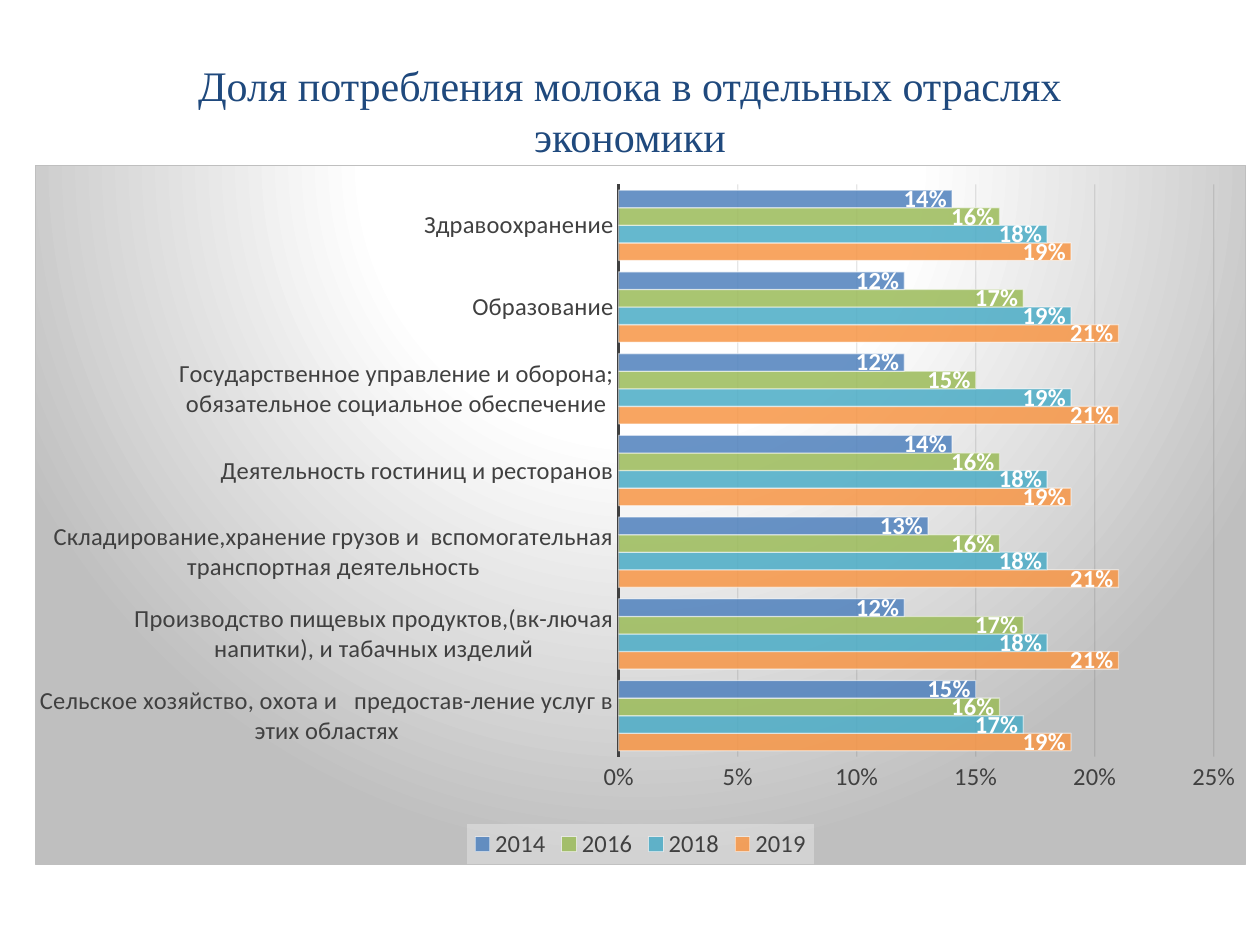
from lxml.etree import SubElement
from pptx import Presentation
from pptx.chart.data import CategoryChartData
from pptx.dml.color import RGBColor
from pptx.enum.chart import XL_CHART_TYPE as CHART, XL_LABEL_POSITION as LABEL
from pptx.enum.chart import XL_LEGEND_POSITION as LEGEND, XL_TICK_MARK as TICK
from pptx.enum.text import MSO_ANCHOR, PP_ALIGN
from pptx.oxml import parse_xml
from pptx.oxml.ns import nsdecls, qn
from pptx.util import Pt

PX = 914400 / 126
COLORS = {
    "title": "1F497D", "text": "404040", "grid": "0D0D0D", "border": "BFBFBF",
    "white": "FFFFFF", "legend": "F2F2F2",
    "2019": "F79646", "2018": "4BACC6", "2016": "9BBB59", "2014": "4F81BD",
}
CATEGORIES = [
    "Сельское хозяйство, охота и   предостав-ление услуг в этих областях",
    "Производство пищевых продуктов,(вк-лючая напитки), и табачных изделий",
    "Складирование,хранение грузов и  вспомогательная транспортная деятельность",
    "Деятельность гостиниц и ресторанов",
    "Государственное управление и оборона; обязательное социальное обеспечение",
    "Образование",
    "Здравоохранение",
]
SHARES = {
    "2019": [0.19, 0.21, 0.21, 0.19, 0.21, 0.21, 0.19],
    "2018": [0.17, 0.18, 0.18, 0.18, 0.19, 0.19, 0.18],
    "2016": [0.16, 0.17, 0.16, 0.16, 0.15, 0.17, 0.16],
    "2014": [0.15, 0.12, 0.13, 0.14, 0.12, 0.12, 0.14],
}


def box(*lengths):
    """Turn px lengths into EMU."""
    return [round(n * PX) for n in lengths]


def set_font(font, size, color, name="Calibri", bold=False):
    """Set face, size, colour and weight."""
    font.name, font.size, font.bold = name, Pt(size), bold
    font.color.rgb = RGBColor.from_string(COLORS[color])


def set_line(line, color, width):
    """Give a line a solid colour and a width in points."""
    line.color.rgb = RGBColor.from_string(COLORS[color])
    line.width = Pt(width)


def set_alpha(root, path, percent):
    """Make the solid colours found under a path partly transparent."""
    for color in root.xpath(f"{path}/a:solidFill/a:srgbClr"):
        SubElement(color, qn("a:alpha")).set("val", str(percent * 1000))


def add_title(slide, lines, *at):
    """Add the centred title with a break between its lines."""
    tf = slide.shapes.add_textbox(*box(*at)).text_frame
    tf.word_wrap = True
    tf.vertical_anchor = MSO_ANCHOR.MIDDLE
    p = tf.paragraphs[0]
    p.text = "\v".join(lines)
    p.alignment = PP_ALIGN.CENTER
    set_font(p.font, 24, "title", "Times New Roman")


def style_axes(chart):
    """Style the category axis, the value axis and its gridlines."""
    cat, val = chart.category_axis, chart.value_axis
    for axis in (cat, val):
        axis.major_tick_mark = axis.minor_tick_mark = TICK.NONE
        set_font(axis.tick_labels.font, 14, "text")
    set_line(cat.format.line, "text", 1.5)
    val.format.line.fill.background()
    val.minimum_scale, val.maximum_scale, val.major_unit = 0, 0.25, 0.05
    val.tick_labels.number_format = "0%"
    val.tick_labels.number_format_is_linked = False
    set_line(val.major_gridlines.format.line, "grid", 0.75)
    set_alpha(chart.element, ".//c:majorGridlines/c:spPr/a:ln", 10)


def style_series(chart):
    """Colour the bars and label them inside their ends."""
    plot = chart.plots[0]
    plot.gap_width, plot.overlap, plot.vary_by_categories = 65, 0, False
    for series in plot.series:
        series.format.fill.solid()
        series.format.fill.fore_color.rgb = RGBColor.from_string(COLORS[series.name])
        set_line(series.format.line, "white", 0.75)
        series.invert_if_negative = False
        labels = series.data_labels
        labels.show_value, labels.position = True, LABEL.INSIDE_END
        labels.number_format, labels.number_format_is_linked = "0%", False
        set_font(labels.font, 14, "white", bold=True)
    set_alpha(chart.element, ".//c:ser/c:spPr", 85)
    set_alpha(chart.element, ".//c:ser/c:spPr/a:ln", 50)


def style_legend(chart):
    """Put the legend at the bottom on a pale panel."""
    chart.has_legend = True
    legend = chart.legend
    legend.position, legend.include_in_layout = LEGEND.BOTTOM, False
    set_font(legend.font, 14, "text")
    chart.element.xpath(".//c:legend/c:overlay")[0].addnext(parse_xml(
        f'<c:spPr {nsdecls("c", "a")}><a:solidFill><a:srgbClr val="{COLORS["legend"]}">'
        '<a:alpha val="39000"/></a:srgbClr></a:solidFill></c:spPr>'))


def style_area(chart):
    """Add the radial background and fix the inner plot area."""
    stops = "".join(
        f'<a:gs pos="{pos}000"><a:srgbClr val="{COLORS[color]}"/></a:gs>'
        for pos, color in ((0, "white"), (39, "white"), (100, "border")))
    chart.element.xpath("c:chart")[0].addnext(parse_xml(
        f'<c:spPr {nsdecls("c", "a")}><a:gradFill><a:gsLst>{stops}</a:gsLst>'
        '<a:path path="circle"><a:fillToRect l="50000" t="-80000" r="50000" b="180000"/>'
        '</a:path></a:gradFill><a:ln w="9525"><a:solidFill>'
        f'<a:srgbClr val="{COLORS["border"]}"/></a:solidFill></a:ln></c:spPr>'))
    area = chart.element.xpath(".//c:plotArea")[0]
    for old in area.xpath("c:layout"):
        area.remove(old)
    sizes = "".join(f'<c:{key} val="{val}"/>' for key, val in (
        ("layoutTarget", "inner"), ("xMode", "edge"), ("yMode", "edge"),
        ("x", 0.482), ("y", 0.027), ("w", 0.492), ("h", 0.819)))
    area.insert(0, parse_xml(
        f'<c:layout {nsdecls("c")}><c:manualLayout>{sizes}</c:manualLayout></c:layout>'))


def add_bar_chart(slide, *at):
    """Add the clustered bars of milk shares by industry."""
    data = CategoryChartData(number_format="0%")
    data.categories = CATEGORIES
    for year, shares in SHARES.items():
        data.add_series(year, shares)
    chart = slide.shapes.add_chart(CHART.BAR_CLUSTERED, *box(*at), data).chart
    chart.has_title = False
    chart.font.name, chart.font.size = "Calibri", Pt(14)
    style_axes(chart)
    style_series(chart)
    style_legend(chart)
    style_area(chart)


def main():
    """Build and save the slide."""
    prs = Presentation()
    prs.slide_width, prs.slide_height = box(1260, 945)
    slide = prs.slides.add_slide(prs.slide_layouts[6])
    add_title(slide, ["Доля потребления молока в отдельных отраслях", "экономики"],
              63, 55, 1134, 110)
    add_bar_chart(slide, 35, 165, 1211, 700)
    prs.save("out.pptx")


if __name__ == "__main__":
    main()
